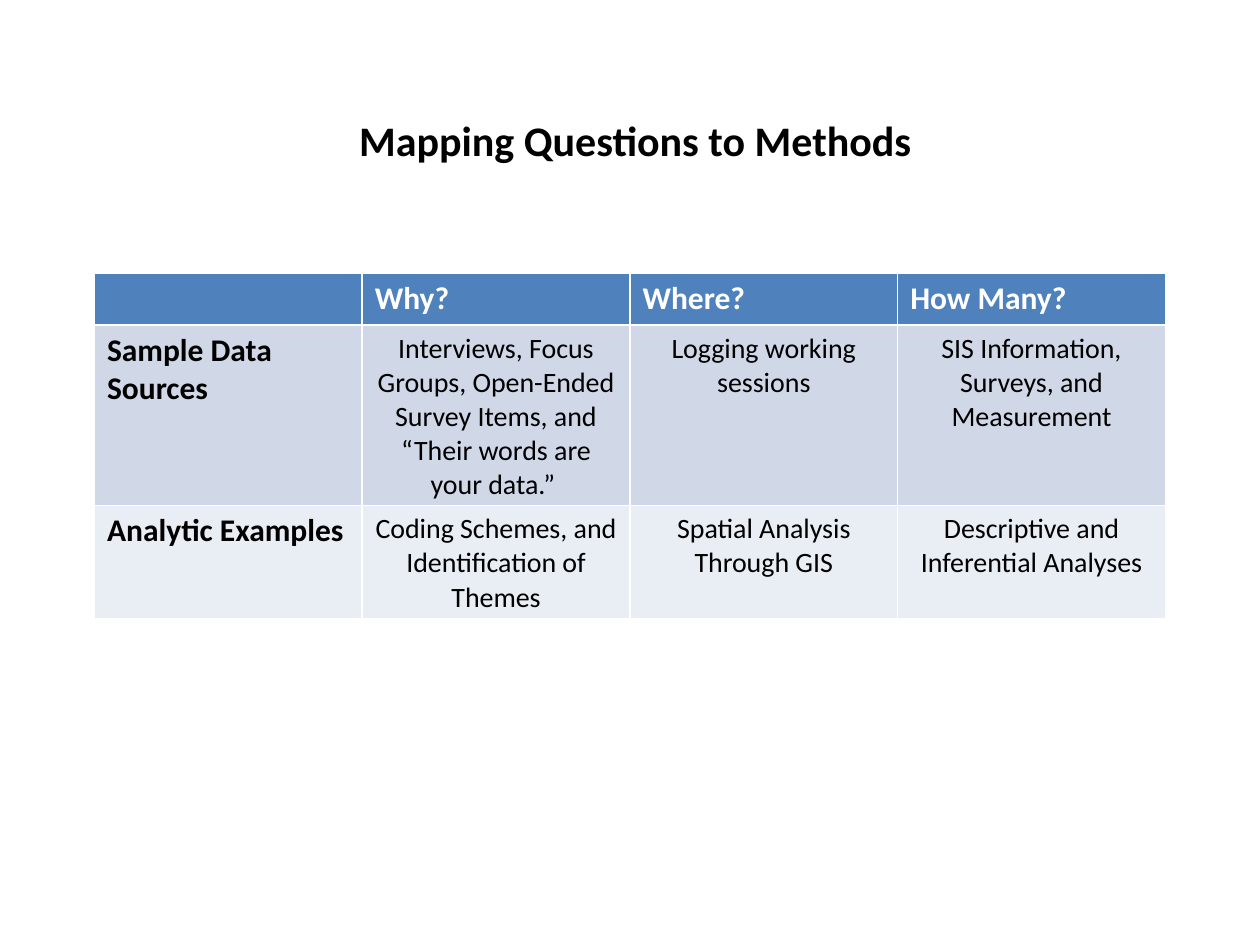
from pptx import Presentation
from pptx.dml.color import RGBColor
from pptx.enum.text import MSO_ANCHOR, MSO_AUTO_SIZE, PP_ALIGN
from pptx.util import Inches, Pt

HEADER_FILL, BAND_FILLS = "4F81BD", ("D0D8E8", "E9EDF4")
METHODS = [
    ("", "Why?", "Where?", "How Many?"),
    ("Sample Data Sources",
     "Interviews, Focus Groups, Open-Ended Survey Items, and “Their words are your data.” ",
     "Logging working sessions",
     "SIS Information, Surveys, and Measurement"),
    ("Analytic Examples",
     "Coding Schemes, and Identification of Themes",
     "Spatial Analysis Through GIS",
     "Descriptive and Inferential Analyses"),
]
ROW_HEIGHTS = (0.41, 1.43, 0.9)


def color(hex_value):
    """Return the colour for a hex string."""
    return RGBColor.from_string(hex_value)


def format_text(frame, size, hex_value, bold, align):
    """Format every paragraph and run of a text frame."""
    for paragraph in frame.paragraphs:
        paragraph.alignment = align
        for run in paragraph.runs:
            run.font.name = "Calibri"
            run.font.size = Pt(size)
            run.font.bold = bold
            run.font.color.rgb = color(hex_value)


def place_title(slide, left, top, width, height):
    """Place the slide title in the given box."""
    title = slide.shapes.title
    title.left, title.top, title.width, title.height = left, top, width, height
    frame = title.text_frame
    frame.text = "Mapping Questions to Methods"
    frame.word_wrap = False
    frame.auto_size = MSO_AUTO_SIZE.SHAPE_TO_FIT_TEXT
    frame.vertical_anchor = MSO_ANCHOR.TOP
    format_text(frame, 24, "000000", True, PP_ALIGN.LEFT)


def place_methods(slide, left, top, width, height):
    """Place the table of questions and methods in the given box."""
    table = slide.shapes.add_table(
        len(METHODS), len(METHODS[0]), left, top, width, height).table
    for row, row_height in zip(table.rows, ROW_HEIGHTS):
        row.height = Inches(row_height)
    for row_index, entries in enumerate(METHODS):
        is_header = row_index == 0
        fill = HEADER_FILL if is_header else BAND_FILLS[row_index - 1]
        for column_index, entry in enumerate(entries):
            cell = table.cell(row_index, column_index)
            cell.fill.solid()
            cell.fill.fore_color.rgb = color(fill)
            cell.text_frame.text = entry
            is_label = is_header or column_index == 0
            format_text(cell.text_frame, 18 if is_label else 16,
                        "FFFFFF" if is_header else "000000", is_label,
                        PP_ALIGN.LEFT if is_label else PP_ALIGN.CENTER)


def main():
    """Build and save the slide."""
    deck = Presentation()
    deck.slide_width, deck.slide_height = Inches(10), Inches(7.5)
    slide = deck.slides.add_slide(deck.slide_layouts[5])
    place_title(slide, Inches(2.75), Inches(0.86), Inches(4.63), Inches(0.5))
    place_methods(slide, Inches(0.75), Inches(2.17), Inches(8.5),
                  Inches(sum(ROW_HEIGHTS)))
    deck.save("out.pptx")


if __name__ == "__main__":
    main()
